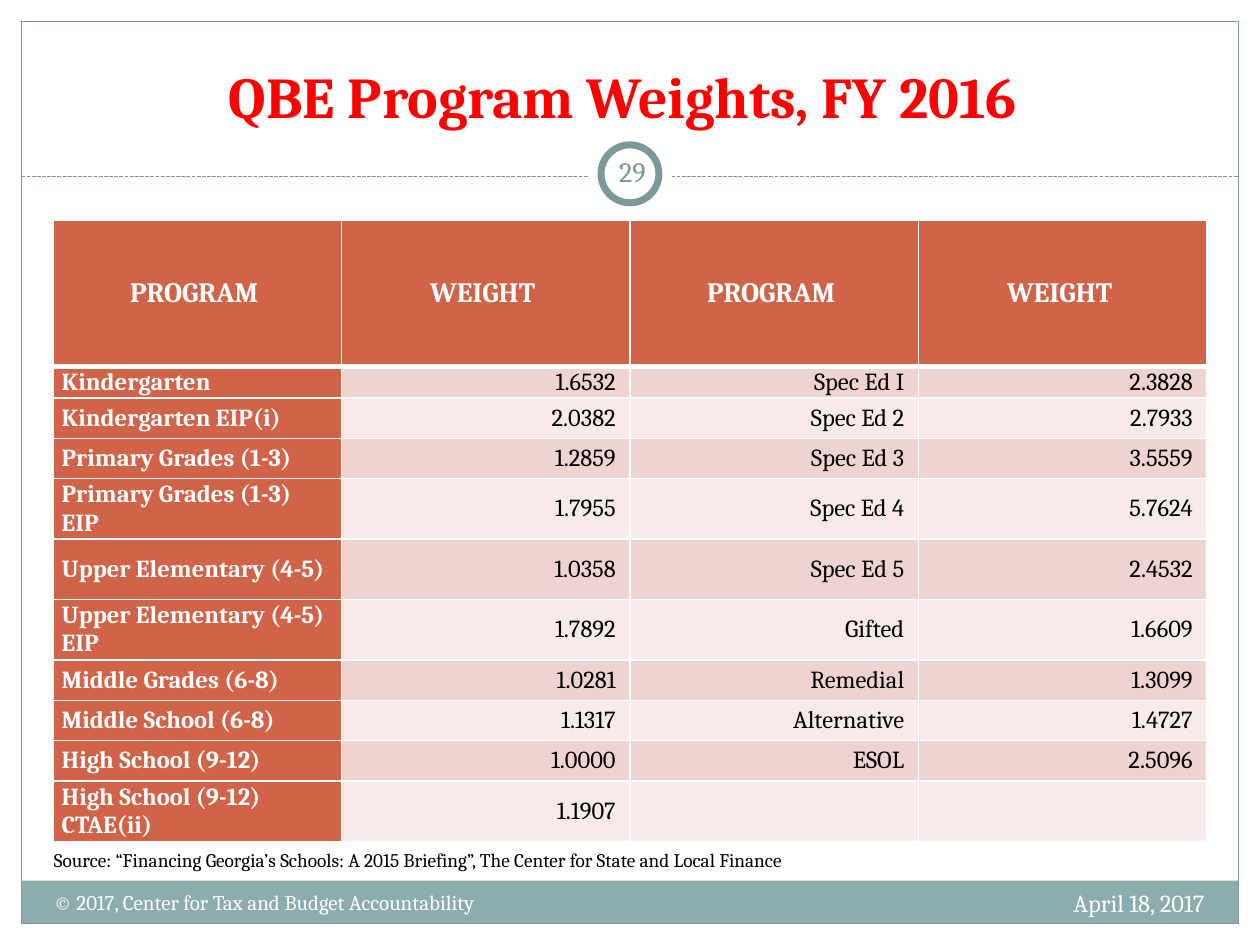
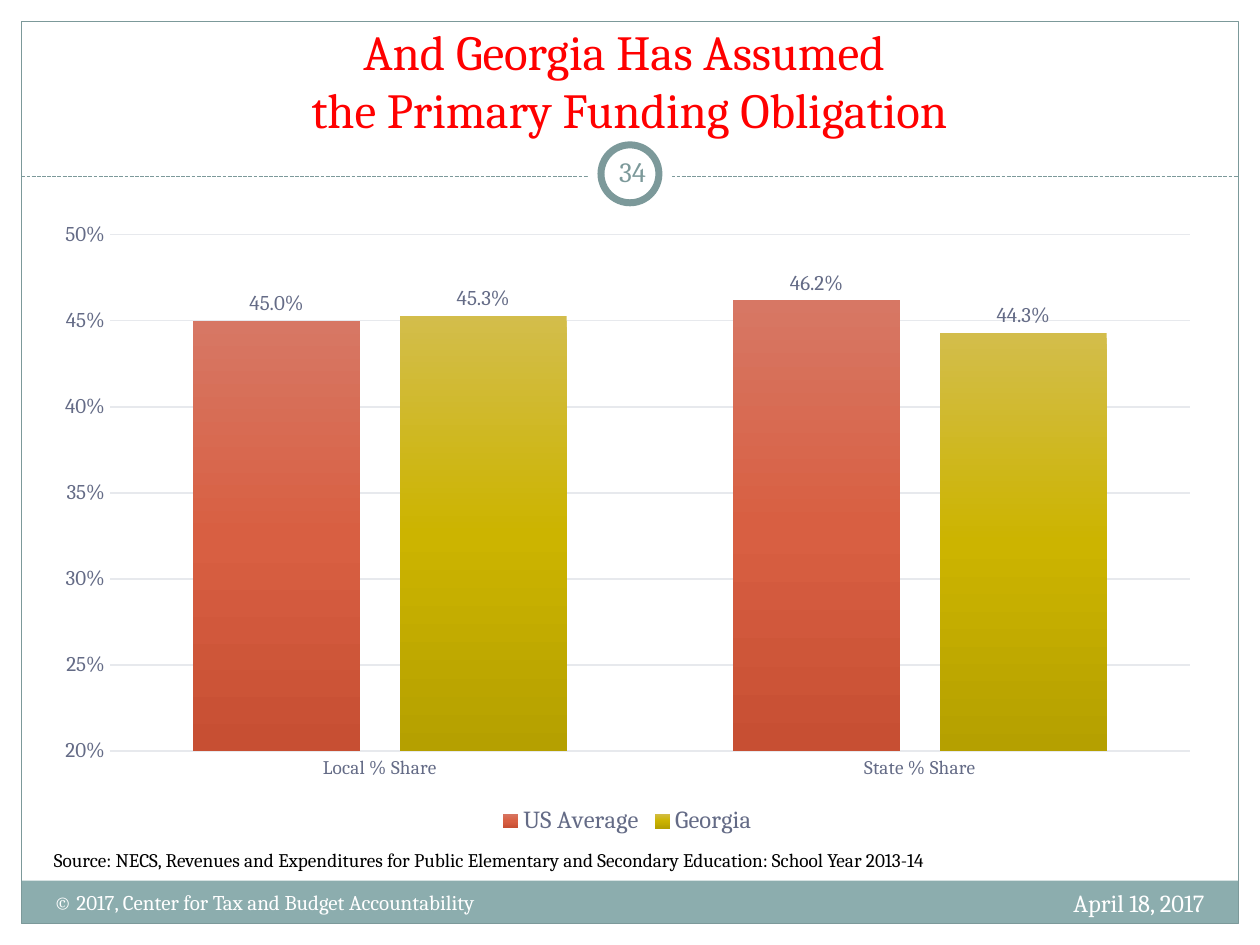
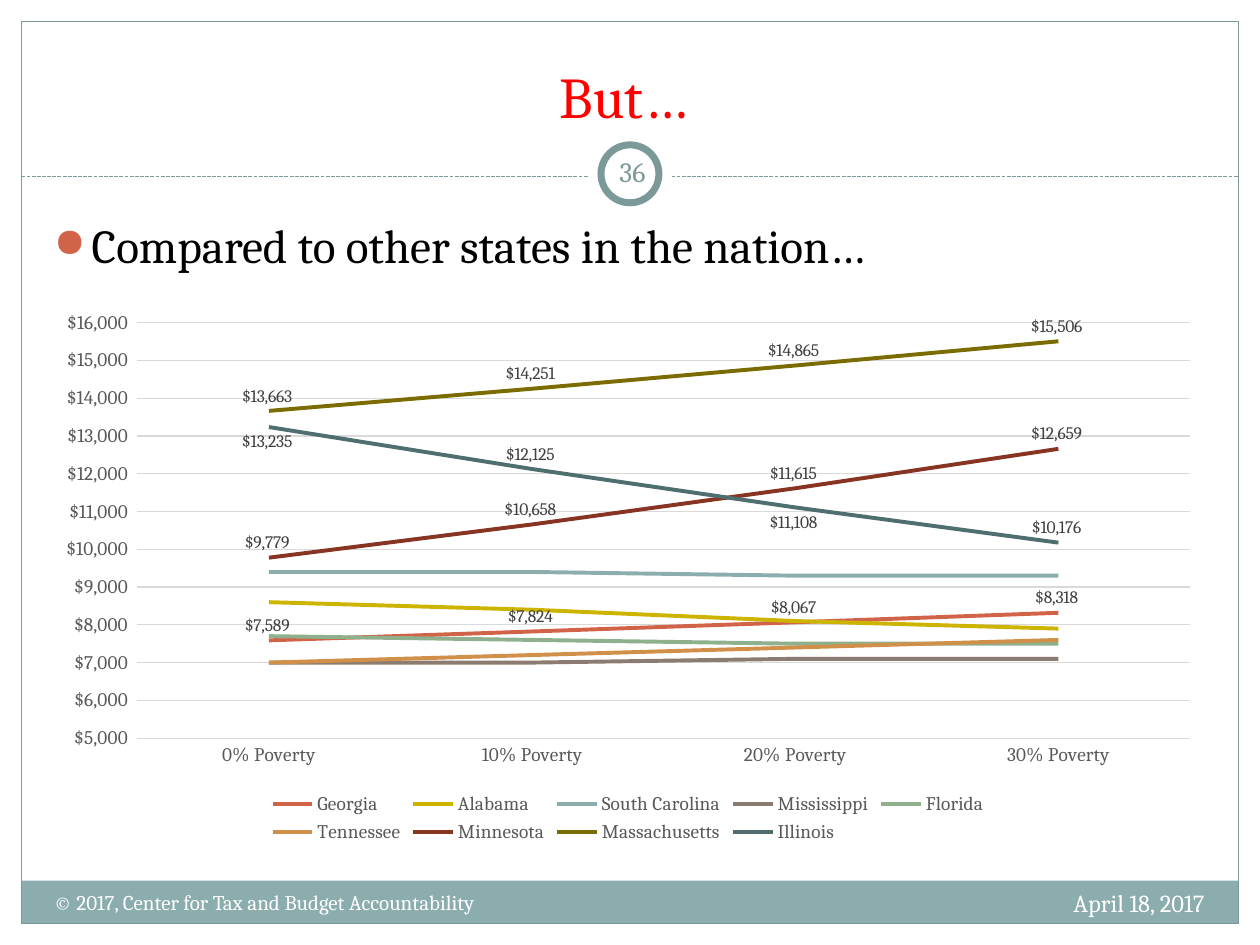
from collections import namedtuple
from copy import deepcopy

from pptx import Presentation
from pptx.chart.data import CategoryChartData
from pptx.dml.color import RGBColor
from pptx.enum.chart import XL_CHART_TYPE, XL_LABEL_POSITION, XL_LEGEND_POSITION, XL_TICK_MARK
from pptx.enum.dml import MSO_LINE
from pptx.enum.shapes import MSO_CONNECTOR, MSO_SHAPE
from pptx.enum.text import MSO_ANCHOR, PP_ALIGN
from pptx.oxml import parse_xml
from pptx.oxml.ns import nsdecls
from pptx.util import Inches, Pt

FONT = "Cambria"
WHITE = RGBColor(0xFF, 0xFF, 0xFF)
BLACK = RGBColor(0x00, 0x00, 0x00)
RED = RGBColor(0xFF, 0x00, 0x00)
SLATE = RGBColor(0x7C, 0x99, 0x9A)
TEAL = RGBColor(0x8C, 0xAD, 0xAE)
RUST = RGBColor(0xD1, 0x63, 0x49)
GOLD = RGBColor(0xCC, 0xB4, 0x00)
BROWN = RGBColor(0x8C, 0x7B, 0x70)
GREEN = RGBColor(0x8F, 0xB0, 0x8C)
ORANGE = RGBColor(0xD1, 0x90, 0x49)
DARK_RUST = RGBColor(0x87, 0x35, 0x22)
DARK_GOLD = RGBColor(0x7A, 0x6C, 0x00)
DARK_TEAL = RGBColor(0x4E, 0x6E, 0x6F)
DARK_BAND = RGBColor(0xEE, 0xD3, 0xD0)
LIGHT_BAND = RGBColor(0xF7, 0xEA, 0xE9)
BLUE_GRAY = RGBColor(0x64, 0x6B, 0x86)
PALE_GRAY = RGBColor(0xE7, 0xE9, 0xED)
TEXT_GRAY = RGBColor(0x59, 0x59, 0x59)
LABEL_GRAY = RGBColor(0x40, 0x40, 0x40)
GRID_GRAY = RGBColor(0xD9, 0xD9, 0xD9)
RUST_GRADIENT = [RGBColor(0xD7, 0x77, 0x64), RGBColor(0xD8, 0x5F, 0x42), RGBColor(0xC7, 0x4F, 0x33)]
GOLD_GRADIENT = [RGBColor(0xD3, 0xBD, 0x4B), GOLD, RGBColor(0xB5, 0xA0, 0x00)]

Box = namedtuple("Box", "left top width height")
FRAME = Box(0.17, 0.17, 9.66, 7.16)
TITLE = Box(0.33, 0.25, 9.33, 0.83)
TALL_TITLE = Box(0.33, 0.17, 9.33, 0.98)
BODY = Box(0.33, 1.67, 9.3, 5)
SOURCE = Box(0.33, 6.68, 9.3, 0.29)

DOLLARS = '"$"#,##0_);[Red]\\("$"#,##0\\)'

WEIGHT_ROWS = [
    (0.25, "Kindergarten", "1.6532 ", "Spec Ed I ", "2.3828 "),
    (0.32, "Kindergarten EIP(i)", "2.0382 ", "Spec Ed 2 ", "2.7933 "),
    (0.32, "Primary Grades (1-3)", "1.2859 ", "Spec Ed 3 ", "3.5559 "),
    (0.48, "Primary Grades (1-3) EIP", "1.7955 ", "Spec Ed 4 ", "5.7624 "),
    (0.48, "Upper Elementary (4-5)", "1.0358 ", "Spec Ed 5 ", "2.4532 "),
    (0.48, "Upper Elementary (4-5) EIP", "1.7892 ", "Gifted ", "1.6609 "),
    (0.32, "Middle Grades (6-8)", "1.0281 ", "Remedial ", "1.3099 "),
    (0.32, "Middle School (6-8)", "1.1317 ", "Alternative ", "1.4727 "),
    (0.32, "High School (9-12)", "1.0000 ", "ESOL ", "2.5096 "),
    (0.48, "High School (9-12) CTAE(ii)", "1.1907 ", "", ""),
]

# Name, line colour, whether values are labelled, values
STATES = [
    ("Georgia", RUST, True, (7589, 7824, 8067, 8318)),
    ("Alabama", GOLD, False, (8600, 8400, 8100, 7900)),
    ("South Carolina", TEAL, False, (9400, 9400, 9300, 9300)),
    ("Mississippi", BROWN, False, (7000, 7000, 7100, 7100)),
    ("Florida", GREEN, False, (7700, 7600, 7500, 7500)),
    ("Tennessee", ORANGE, False, (7000, 7200, 7400, 7600)),
    ("Minnesota", DARK_RUST, True, (9779, 10658, 11615, 12659)),
    ("Massachusetts", DARK_GOLD, True, (13663, 14251, 14865, 15506)),
    ("Illinois", DARK_TEAL, True, (13235, 12125, 11108, 10176)),
]


def inches(box):
    return [Inches(length) for length in box]


def set_font(font, size, color, bold=False):
    font.name = FONT
    font.size = Pt(size)
    font.bold = bold
    font.color.rgb = color


def write_text(frame, text, size=12, color=BLACK, bold=False, align=PP_ALIGN.LEFT):
    paragraph = frame.paragraphs[0]
    paragraph.alignment = align
    for index, line in enumerate(text.split("\n")):
        if index:
            paragraph.add_line_break()
        run = paragraph.add_run()
        run.text = line
        set_font(run.font, size, color, bold)
    return paragraph


def add_text(slide, box, text, anchor=MSO_ANCHOR.TOP, inset=None, **text_format):
    frame = slide.shapes.add_textbox(*inches(box)).text_frame
    frame.word_wrap = True
    frame.vertical_anchor = anchor
    if inset is not None:
        frame.margin_left = frame.margin_right = Inches(inset)
        frame.margin_top = frame.margin_bottom = Inches(inset)
    return write_text(frame, text, **text_format)


def add_plain_shape(slide, kind, box, fill=None, line=None, line_width=0.75):
    shape = slide.shapes.add_shape(kind, *inches(box))
    shape.shadow.inherit = False
    if fill is None:
        shape.fill.background()
    else:
        shape.fill.solid()
        shape.fill.fore_color.rgb = fill
    if line is None:
        shape.line.fill.background()
    else:
        shape.line.color.rgb = line
        shape.line.width = Pt(line_width)


def add_circle(slide, center_x, center_y, diameter, **style):
    box = Box(center_x - diameter / 2, center_y - diameter / 2, diameter, diameter)
    add_plain_shape(slide, MSO_SHAPE.OVAL, box, **style)


def add_frame(slide, box, number):
    """Footer band, border, dashed rule and numbered badge."""
    bottom = box.top + box.height
    right = box.left + box.width
    band = Box(box.left, bottom - 0.34, box.width, 0.34)
    add_plain_shape(slide, MSO_SHAPE.RECTANGLE, band, fill=TEAL)
    add_plain_shape(slide, MSO_SHAPE.RECTANGLE, box, line=SLATE)

    # Dashed rule
    rule_y = box.top + 1.23
    rule = slide.shapes.add_connector(
        MSO_CONNECTOR.STRAIGHT, Inches(box.left), Inches(rule_y), Inches(right), Inches(rule_y))
    rule.line.color.rgb = SLATE
    rule.line.width = Pt(0.75)
    rule.line.dash_style = MSO_LINE.SQUARE_DOT
    rule._element.spPr.append(parse_xml(f"<a:effectLst {nsdecls('a')}/>"))

    # Slide number badge
    center_x, center_y = box.left + box.width / 2, rule_y - 0.02
    add_circle(slide, center_x, center_y, 0.67, fill=WHITE)
    add_circle(slide, center_x, center_y, 0.46, fill=WHITE, line=SLATE, line_width=4)
    add_text(slide, Box(center_x - 0.23, center_y - 0.26, 0.5, 0.48), number,
             anchor=MSO_ANCHOR.MIDDLE, inset=0.05, size=16, color=SLATE, align=PP_ALIGN.CENTER)

    # Footer texts
    add_text(slide, Box(right - 3.5, bottom - 0.33, 3.33, 0.4), "April 18, 2017",
             size=14, color=WHITE, align=PP_ALIGN.RIGHT)
    add_text(slide, Box(box.left + 0.16, bottom - 0.32, 4.2, 0.4),
             "© 2017, Center for Tax and Budget Accountability", size=12, color=WHITE)


def add_titled_slide(presentation, number, title, box=TITLE, **title_format):
    slide = presentation.slides.add_slide(presentation.slide_layouts[6])
    add_frame(slide, FRAME, number)
    add_text(slide, box, title, anchor=MSO_ANCHOR.BOTTOM, color=RED,
             align=PP_ALIGN.CENTER, **title_format)
    return slide


def style_cell(cell, text, fill, top=1, bottom=1, **text_format):
    cell.vertical_anchor = MSO_ANCHOR.MIDDLE
    cell.margin_left = cell.margin_right = Inches(0.07)
    cell.margin_top = cell.margin_bottom = 0
    properties = cell._tc.get_or_add_tcPr()
    for side, width in (("L", 1), ("R", 1), ("T", top), ("B", bottom)):
        properties.append(parse_xml(
            f'<a:ln{side} {nsdecls("a")} w="{Pt(width)}"><a:solidFill>'
            f'<a:srgbClr val="{WHITE}"/></a:solidFill></a:ln{side}>'))
    cell.fill.solid()
    cell.fill.fore_color.rgb = fill
    if text:
        write_text(cell.text_frame, text, **text_format)


def add_weight_table(slide, box):
    headings = ["PROGRAM ", "WEIGHT "] * 2
    table = slide.shapes.add_table(len(WEIGHT_ROWS) + 1, len(headings), *inches(box)).table
    for column in table.columns:
        column.width = Inches(box.width / len(headings))

    # Header row
    table.rows[0].height = Inches(1.16)
    for column, heading in enumerate(headings):
        style_cell(table.cell(0, column), heading, RUST, bottom=3,
                   size=16, color=WHITE, bold=True, align=PP_ALIGN.CENTER)

    # Banded rows with a coloured first column
    for row, (height, program, *values) in enumerate(WEIGHT_ROWS, start=1):
        table.rows[row].height = Inches(height)
        top = 3 if row == 1 else 1
        band = DARK_BAND if row % 2 else LIGHT_BAND
        style_cell(table.cell(row, 0), program, RUST, top=top, size=14, color=WHITE, bold=True)
        for column, value in enumerate(values, start=1):
            style_cell(table.cell(row, column), value, band, top=top,
                       size=14, align=PP_ALIGN.RIGHT)


def add_styled_chart(slide, box, kind, categories, series_values, number_format,
                     limits, color, grid_color, value_size, legend_size):
    data = CategoryChartData(number_format=number_format)
    data.categories = categories
    for name, values in series_values:
        data.add_series(name, values)
    chart = slide.shapes.add_chart(kind, *inches(box), data).chart
    set_font(chart.font, 10, BLACK)
    chart.has_title = False
    chart.has_legend = True
    chart.legend.position = XL_LEGEND_POSITION.BOTTOM
    chart.legend.include_in_layout = False
    set_font(chart.legend.font, legend_size, color)
    chart.plots[0].vary_by_categories = False

    # Axes
    category_axis, value_axis = chart.category_axis, chart.value_axis
    for axis, size in ((category_axis, 11), (value_axis, value_size)):
        axis.major_tick_mark = axis.minor_tick_mark = XL_TICK_MARK.NONE
        set_font(axis.tick_labels.font, size, color)
    value_axis.minimum_scale, value_axis.maximum_scale, value_axis.major_unit = limits
    value_axis.tick_labels.number_format = number_format
    value_axis.tick_labels.number_format_is_linked = False
    value_axis.format.line.fill.background()
    value_axis.has_major_gridlines = True
    for line in (category_axis.format.line, value_axis.major_gridlines.format.line):
        line.color.rgb = grid_color
        line.width = Pt(0.75)
    return chart


def label_series(series, number_format, position, size, color):
    labels = series.data_labels
    labels.show_value = True
    labels.position = position
    labels.number_format = number_format
    labels.number_format_is_linked = False
    set_font(labels.font, size, color)


def fill_gradient(series, colors):
    fill = series.format.fill
    fill.gradient()
    fill.gradient_angle = 270
    stop_list = series._element.xpath(".//a:gsLst")[0]
    stop_list.append(deepcopy(stop_list[0]))
    for index, (stop, color) in enumerate(zip(fill.gradient_stops, colors)):
        stop.position = index / 2
        stop.color.rgb = color


def add_share_chart(slide, box):
    chart = add_styled_chart(
        slide, box, XL_CHART_TYPE.COLUMN_CLUSTERED, ["Local % Share", "State % Share"],
        [("US Average", (0.45, 0.462)), ("Georgia", (0.453, 0.443))], "0%",
        limits=(0.2, 0.5, 0.05), color=BLUE_GRAY, grid_color=PALE_GRAY,
        value_size=12, legend_size=14)
    plot = chart.plots[0]
    plot.gap_width = 100
    plot.overlap = -24
    for series, colors in zip(plot.series, (RUST_GRADIENT, GOLD_GRADIENT)):
        series.invert_if_negative = False
        fill_gradient(series, colors)
        label_series(series, "0.0%", XL_LABEL_POSITION.OUTSIDE_END, 12, BLUE_GRAY)


def add_poverty_chart(slide, box):
    chart = add_styled_chart(
        slide, box, XL_CHART_TYPE.LINE, [f"{percent}% Poverty" for percent in range(0, 40, 10)],
        [(name, values) for name, _, _, values in STATES], DOLLARS,
        limits=(5000, 16000, 1000), color=TEXT_GRAY, grid_color=GRID_GRAY,
        value_size=11, legend_size=11)
    for series, (name, color, labelled, _) in zip(chart.plots[0].series, STATES):
        series.smooth = False
        series.format.line.color.rgb = color
        series.format.line.width = Pt(2.25)
        if labelled:
            label_series(series, DOLLARS, XL_LABEL_POSITION.ABOVE, 10, LABEL_GRAY)
        if name == "Illinois":
            for index in (0, 2):
                label = series.points[index].data_label
                set_font(label.font, 10, LABEL_GRAY)
                label.position = XL_LABEL_POSITION.BELOW


def add_bullet(slide, box, text):
    paragraph = add_text(slide, box, text, size=27)
    paragraph.space_before = Pt(5.4)
    properties = paragraph._p.get_or_add_pPr()
    properties.set("marL", str(Inches(0.3)))
    properties.set("indent", str(Inches(-0.3)))
    for bullet in (f'<a:buClr {nsdecls("a")}><a:srgbClr val="{RUST}"/></a:buClr>',
                   f'<a:buSzPct {nsdecls("a")} val="85000"/>',
                   f'<a:buChar {nsdecls("a")} char="●"/>'):
        properties.append(parse_xml(bullet))


def main():
    presentation = Presentation()
    presentation.slide_width = Inches(10)
    presentation.slide_height = Inches(7.5)

    # Program weights
    slide = add_titled_slide(presentation, "29", "QBE Program Weights, FY 2016 ", size=33, bold=True)
    add_weight_table(slide, Box(0.42, 1.75, 9.16, 4.93))
    add_text(slide, SOURCE, "Source: “Financing Georgia’s Schools: A 2015 Briefing”, "
             "The Center for State and Local Finance", size=11)

    # Funding shares
    slide = add_titled_slide(presentation, "34",
                             "And Georgia Has Assumed \nthe Primary Funding Obligation",
                             box=TALL_TITLE, size=28)
    add_text(slide, SOURCE, "Source: NECS, Revenues and Expenditures for Public Elementary "
             "and Secondary Education: School Year 2013-14", size=11)
    add_share_chart(slide, BODY)

    # Comparison with other states
    slide = add_titled_slide(presentation, "36", "But… ", size=33)
    add_bullet(slide, BODY, "Compared to other states in the nation…")
    add_poverty_chart(slide, Box(0.34, 2.38, 9.29, 4.36))

    presentation.save("out.pptx")


if __name__ == "__main__":
    main()
